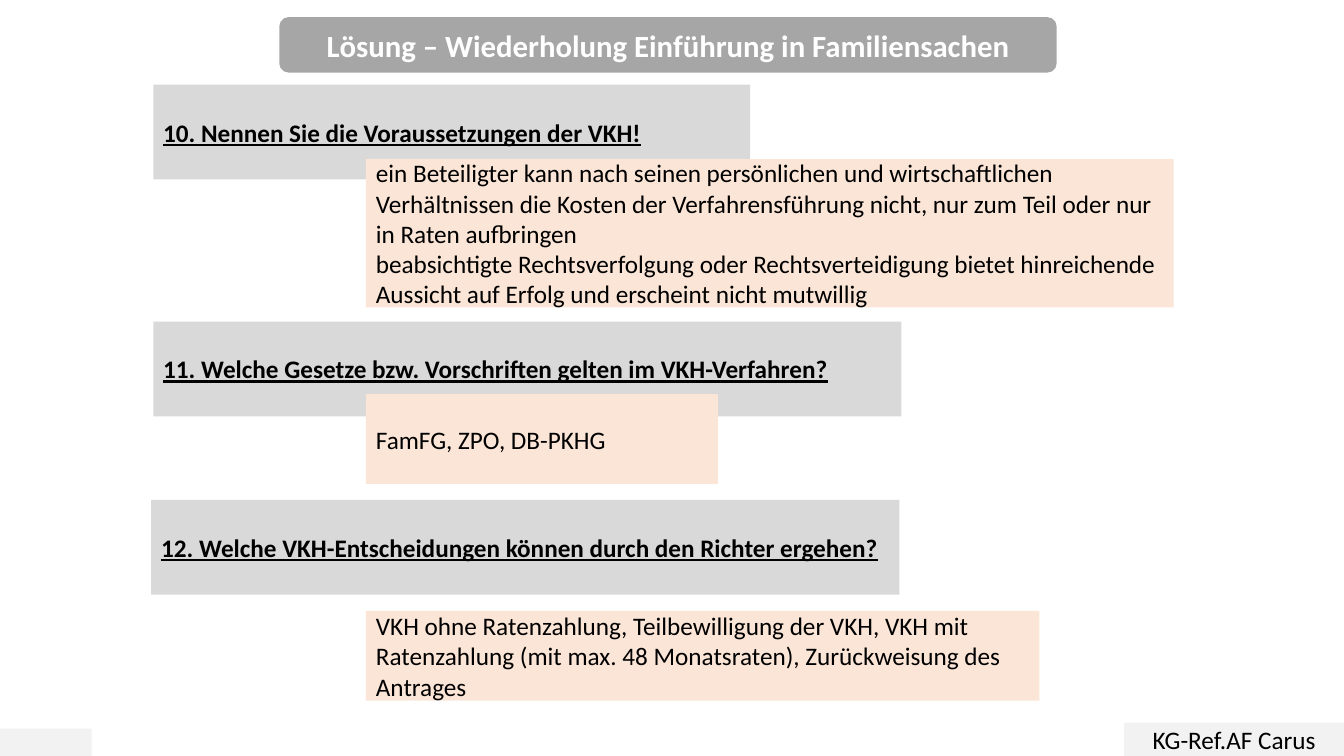
from pptx import Presentation
from pptx.dml.color import RGBColor
from pptx.enum.shapes import MSO_SHAPE
from pptx.enum.text import MSO_ANCHOR, PP_ALIGN
from pptx.util import Inches, Pt

# Content
TITLE = "Lösung – Wiederholung Einführung in Familiensachen"
AUTHOR = "KG-Ref.AF Carus"

# Question, its (left, top, width); answer paragraphs, their (top, width, height)
EXERCISES = [
    ("10. Nennen Sie die Voraussetzungen der VKH!", (1.52, 0.84, 5.92),
     ["ein Beteiligter kann nach seinen persönlichen und wirtschaftlichen "
      "Verhältnissen die Kosten der Verfahrensführung nicht, nur zum Teil "
      "oder nur in Raten aufbringen",
      "beabsichtigte Rechtsverfolgung oder Rechtsverteidigung bietet "
      "hinreichende Aussicht auf Erfolg und erscheint nicht mutwillig"],
     (1.58, 8.01, 1.47)),
    ("11. Welche Gesetze bzw. Vorschriften gelten im VKH-Verfahren?", (1.52, 3.19, 7.42),
     ["FamFG, ZPO, DB-PKHG"],
     (3.91, 3.49, 0.89)),
    ("12. Welche VKH-Entscheidungen können durch den Richter ergehen?", (1.5, 4.96, 7.42),
     ["VKH ohne Ratenzahlung, Teilbewilligung der VKH, VKH mit Ratenzahlung "
      "(mit max. 48 Monatsraten), Zurückweisung des Antrages"],
     (6.06, 6.68, 0.89)),
]

# Layout and colours
SLIDE_W, SLIDE_H = 13.33, 7.5
QUESTION_H = 0.94
ANSWER_LEFT = 3.63
TITLE_FILL, QUESTION_FILL, ANSWER_FILL, FOOTER_FILL = "A6A6A6", "D9D9D9", "FBE5D6", "F2F2F2"

deck = Presentation()
deck.slide_width, deck.slide_height = Inches(SLIDE_W), Inches(SLIDE_H)
slide = deck.slides.add_slide(deck.slide_layouts[6])


def color(code):
    return RGBColor.from_string(code)


def add_panel(left, top, width, height, fill, kind=MSO_SHAPE.RECTANGLE):
    panel = slide.shapes.add_shape(
        kind, Inches(left), Inches(top), Inches(width), Inches(height))
    panel.shadow.inherit = False
    panel.fill.solid()
    panel.fill.fore_color.rgb = color(fill)
    panel.line.fill.background()
    return panel


def write(panel, *paragraphs, size=18, ink="000000", bold=False,
          underline=False, align=PP_ALIGN.LEFT):
    frame = panel.text_frame
    frame.word_wrap = True
    frame.vertical_anchor = MSO_ANCHOR.MIDDLE
    for number, text in enumerate(paragraphs):
        paragraph = frame.add_paragraph() if number else frame.paragraphs[0]
        paragraph.alignment = align
        run = paragraph.add_run()
        run.text = text
        run.font.name, run.font.size = "Calibri", Pt(size)
        run.font.bold, run.font.underline = bold, underline
        run.font.color.rgb = color(ink)


# Title
banner = add_panel(2.77, 0.17, 7.71, 0.55, TITLE_FILL, MSO_SHAPE.ROUNDED_RECTANGLE)
write(banner, TITLE, size=22, ink="FFFFFF", bold=True, align=PP_ALIGN.CENTER)

# Footer, both blocks resting on the bottom edge
add_panel(0, SLIDE_H - 0.27, 0.91, 0.27, FOOTER_FILL)
author_block = add_panel(SLIDE_W - 2.18, SLIDE_H - 0.33, 2.18, 0.33, FOOTER_FILL)
write(author_block, AUTHOR, align=PP_ALIGN.CENTER)

# Questions with their answers overlapping on top
for question, question_place, answer, answer_place in EXERCISES:
    write(add_panel(*question_place, QUESTION_H, QUESTION_FILL),
          question, bold=True, underline=True)
    write(add_panel(ANSWER_LEFT, *answer_place, ANSWER_FILL), *answer)

deck.save("out.pptx")
